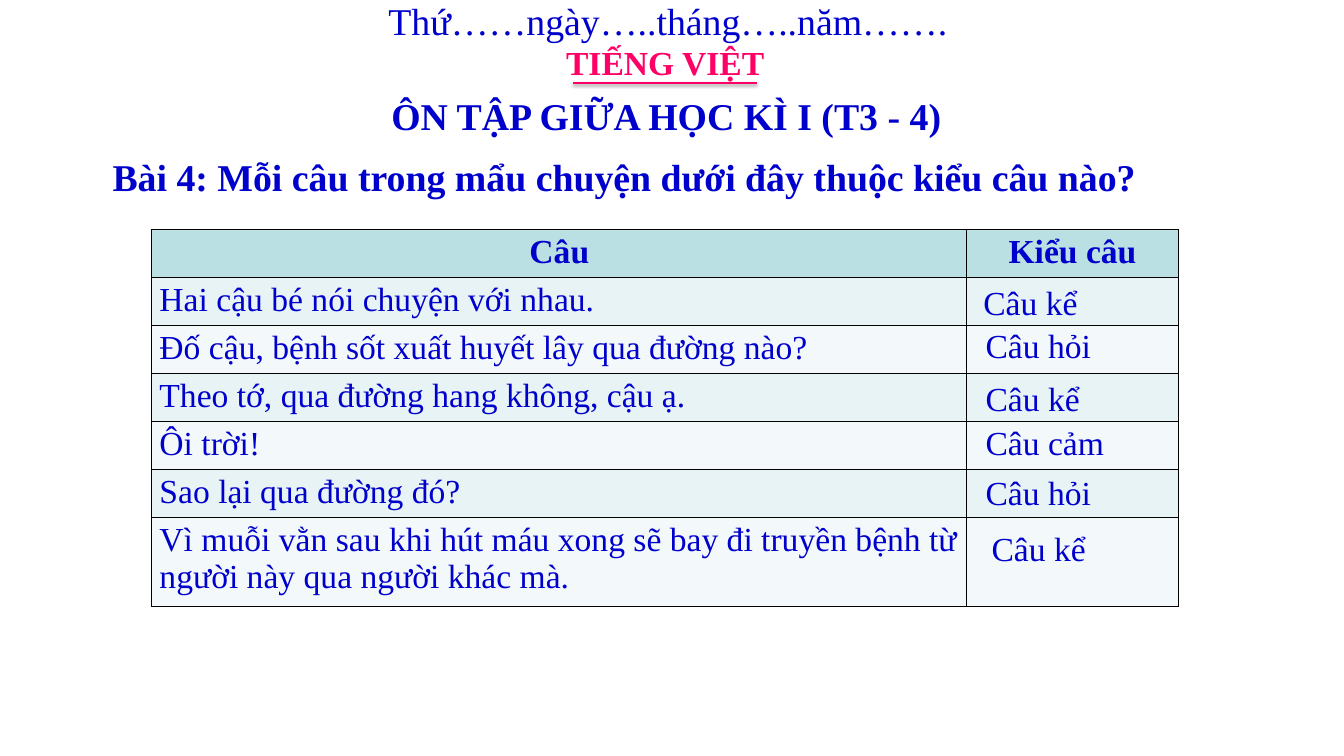
import pptx
import pptx.dml.color
import pptx.enum.shapes
import pptx.enum.text
import pptx.oxml
import pptx.oxml.ns
import pptx.util

COLUMNS, ROWS = 177.8, 100
STEP = pptx.util.Inches(0.1)
FONT = "Times New Roman"
COLORS = {
    "blue": "0000CC", "pink": "FF0066", "black": "000000",
    "header": "BBE0E3", "odd": "E7F3F4", "even": "F3F9FA",
}
ALIGN = pptx.enum.text.PP_ALIGN
ANCHOR = pptx.enum.text.MSO_ANCHOR

HEADINGS = ("Câu", "Kiểu câu")
SENTENCES = (
    "Hai cậu bé nói chuyện với nhau.",
    "Đố cậu, bệnh sốt xuất huyết lây qua đường nào?",
    "Theo tớ, qua đường hang không, cậu ạ.",
    "Ôi trời!",
    "Sao lại qua đường đó?",
    "Vì muỗi vằn sau khi hút máu xong sẽ bay đi truyền bệnh từ người này qua người khác mà.",
)
ANSWERS = (
    ("Câu kể", 1.2, 0), ("Câu hỏi", 1.5, -0.6), ("Câu kể", 1.5, 0),
    ("Câu cảm", 1.5, -0.5), ("Câu hỏi", 1.5, -0.2), ("Câu kể", 2.3, 0.9),
)


def grid(*steps):
    """Turn grid steps into lengths."""
    return [round(step * STEP) for step in steps]


def rgb(name):
    """Look up a named colour."""
    return pptx.dml.color.RGBColor.from_string(COLORS[name])


def write_text(frame, text, size=32, color="blue", bold=False, align=ALIGN.LEFT):
    """Put one formatted paragraph into a text frame."""
    paragraph = frame.paragraphs[0]
    paragraph.alignment = align
    run = paragraph.add_run()
    run.text = text
    run.font.name = FONT
    run.font.size = pptx.util.Pt(size)
    run.font.bold = bold
    run.font.color.rgb = rgb(color)


def add_label(slide, box, text, wrap=True, **text_format):
    """Add a text box at a grid box."""
    frame = slide.shapes.add_textbox(*grid(*box)).text_frame
    frame.word_wrap = wrap
    frame.auto_size = pptx.enum.text.MSO_AUTO_SIZE.SHAPE_TO_FIT_TEXT
    write_text(frame, text, **text_format)


def add_underline(slide, left, right, top):
    """Draw the subject's underline with its soft shadow."""
    line = slide.shapes.add_connector(
        pptx.enum.shapes.MSO_CONNECTOR.STRAIGHT, *grid(left, top, right, top))
    line.line.color.rgb = rgb("pink")
    line.line.width = pptx.util.Pt(2)
    line._element.spPr.append(pptx.oxml.parse_xml(
        f'<a:effectLst {pptx.oxml.ns.nsdecls("a")}>'
        f'<a:outerShdw blurRad="{pptx.util.Pt(3.1)}" dist="{pptx.util.Pt(1.6)}" '
        f'dir="5400000" rotWithShape="0"><a:srgbClr val="{COLORS["black"]}">'
        '<a:alpha val="38000"/></a:srgbClr></a:outerShdw></a:effectLst>'))


def place_title(slide, box, text):
    """Move and format the title placeholder."""
    title = slide.shapes.title
    title.left, title.top, title.width, title.height = grid(*box)
    frame = title.text_frame
    frame.word_wrap = False
    frame.auto_size = pptx.enum.text.MSO_AUTO_SIZE.SHAPE_TO_FIT_TEXT
    frame.vertical_anchor = ANCHOR.TOP
    write_text(frame, text, size=36, bold=True, align=ALIGN.CENTER)


def add_heading(slide, left, top, width):
    """Place the date, subject, lesson title and task."""
    add_label(slide, (left, top, width, 7.1),
              "Thứ……ngày…..tháng…..năm…….", wrap=False, size=36)
    add_label(slide, (left + 23.5, top + 5.8, 28.5, 6.4),
              "TIẾNG VIỆT", wrap=False, color="pink", bold=True)
    add_underline(slide, left + 25.4, left + 49.8, top + 11.8)
    place_title(slide, (left, top + 12.6, 75.5, 7.1), "ÔN TẬP GIỮA HỌC KÌ I (T3 - 4)")
    add_label(slide, (left - 36.5, top + 20.7, 159.5, 7.1),
              "Bài 4: Mỗi câu trong mẩu chuyện dưới đây thuộc kiểu câu nào?",
              size=36, bold=True)


def style_cell(cell, fill):
    """Fill a cell and rule its four sides."""
    cell.fill.solid()
    cell.fill.fore_color.rgb = rgb(fill)
    properties = cell._tc.get_or_add_tcPr()
    for index, side in enumerate("LRTB"):
        properties.insert(index, pptx.oxml.parse_xml(
            f'<a:ln{side} {pptx.oxml.ns.nsdecls("a")} w="{pptx.util.Pt(1)}">'
            f'<a:solidFill><a:srgbClr val="{COLORS["black"]}"/></a:solidFill></a:ln{side}>'))


def add_sentence_table(slide, left, top, width, height):
    """Place the sentence table and the answers over its second column."""
    answer_width, last_height = 28, 11.6
    row_height = (height - last_height) / len(SENTENCES)
    answer_left = left + width - answer_width
    table = slide.shapes.add_table(
        len(SENTENCES) + 1, 2, *grid(left, top, width, height)).table
    for column, size in zip(table.columns, grid(width - answer_width, answer_width)):
        column.width = size
    for row in table.rows:
        row.height = round(row_height * STEP)
    table.rows[len(SENTENCES)].height = round(last_height * STEP)

    for column, heading in enumerate(HEADINGS):
        write_text(table.cell(0, column).text_frame, heading, bold=True, align=ALIGN.CENTER)
        style_cell(table.cell(0, column), "header")
    for row, sentence in enumerate(SENTENCES, start=1):
        write_text(table.cell(row, 0).text_frame, sentence)
        for column in range(2):
            style_cell(table.cell(row, column), "odd" if row % 2 else "even")
    for row, (answer, indent, shift) in enumerate(ANSWERS, start=1):
        add_label(slide, (answer_left + indent, top + row * row_height + shift,
                          answer_width - 5, 6.4), answer)


def main():
    """Build and save the slide."""
    presentation = pptx.Presentation()
    presentation.slide_width, presentation.slide_height = grid(COLUMNS, ROWS)
    slide = presentation.slides.add_slide(presentation.slide_layouts[5])
    add_heading(slide, 50.4, -0.8, 76.7)
    add_sentence_table(slide, 20.1, 30.4, 135.8, 49.7)
    presentation.save("out.pptx")


if __name__ == "__main__":
    main()
